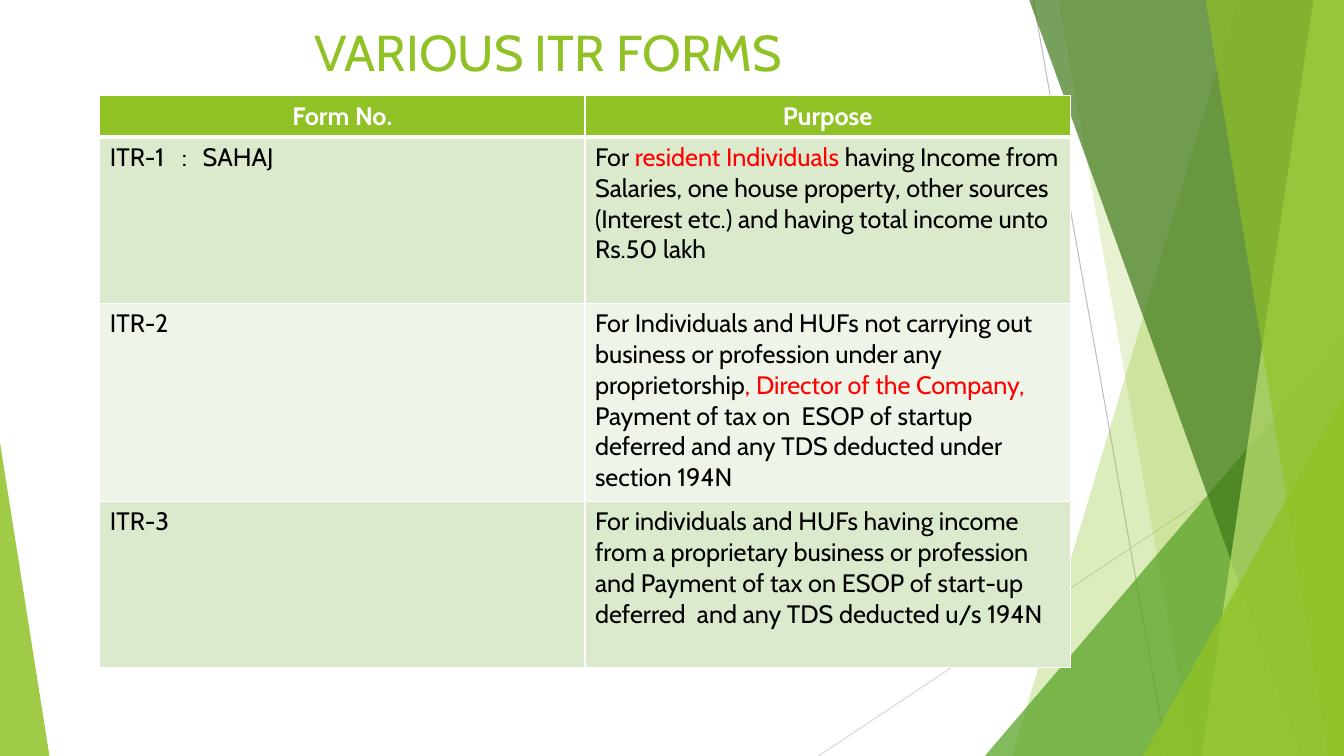
from dataclasses import dataclass

from lxml.etree import SubElement as Sub
from pptx import Presentation
from pptx.dml.color import RGBColor as RGB
from pptx.enum.shapes import MSO_CONNECTOR as Link, MSO_SHAPE as Kind
from pptx.enum.text import MSO_ANCHOR as Anchor, PP_ALIGN as Align
from pptx.oxml.ns import qn
from pptx.util import Inches, Pt

WIDE, HIGH = Inches(13.333), Inches(7.5)


@dataclass(frozen=True)
class Theme:
    font: str = "Cabin"
    title: int = 36
    body: int = 18
    lime: str = "90C226"
    leaf: str = "54A021"
    pine: str = "3F7819"
    pale: str = "C0E474"
    odd: str = "DBE9CD"
    even: str = "EEF4E8"
    white: str = "FFFFFF"
    black: str = "000000"
    red: str = "FF0000"
    dark: str = "BFBFBF"
    light: str = "D9D9D9"


T = Theme()

HEAD = ("Form No.", "Purpose")
# Each purpose is a list of (text, colour) runs
FORMS = [
    ("ITR-1\t:\tSAHAJ", [
        ("For ", T.black),
        ("resident Individuals ", T.red),
        ("having Income from Salaries, one house property, other sources "
         "(Interest etc.) and having total income unto Rs.50 lakh", T.black)]),
    ("ITR-2", [
        ("For Individuals and HUFs not carrying out business or profession "
         "under any proprietorship", T.black),
        (", Director of the Company,", T.red),
        (" Payment of tax on  ESOP of startup deferred and any TDS deducted "
         "under section 194N", T.black)]),
    ("ITR-3", [
        ("For individuals and HUFs having income from a proprietary business "
         "or profession and Payment of tax on ESOP of start-up deferred  and "
         "any TDS deducted u/s 194N", T.black)]),
]


# Lengths are percent of the slide's width and height
def across(part):
    return round(WIDE * part / 100)


def down(part):
    return round(HIGH * part / 100)


def paint(shape, tone, solid):
    shape.shadow.inherit = False
    shape.line.fill.background()
    shape.fill.solid()
    shape.fill.fore_color.rgb = RGB.from_string(tone)
    color = shape.fill._xPr.find(".//" + qn("a:srgbClr"))
    Sub(color, qn("a:alpha"), val=str(solid * 1000))


def panel(slide, top, base, tone, solid):
    """Slanted band that runs from its left edge to the slide's right side."""
    form = slide.shapes.build_freeform(across(top), 0, scale=1.0)
    form.add_line_segments([(WIDE, 0), (WIDE, HIGH), (across(base), HIGH)])
    paint(form.convert_to_shape(), tone, solid)


def wedge(slide, left, top, width, peak, tone, solid):
    """Triangle that stands on the slide's lower edge."""
    shape = slide.shapes.add_shape(
        Kind.ISOSCELES_TRIANGLE, across(left), down(top),
        across(width), down(100 - top))
    shape.adjustments[0] = peak
    paint(shape, tone, solid)


def rule(slide, x1, y1, x2, y2, tone):
    line = slide.shapes.add_connector(
        Link.STRAIGHT, across(x1), down(y1), across(x2), down(y2))
    line.line.color.rgb = RGB.from_string(tone)
    line.line.width = Pt(0.75)
    Sub(line._element.spPr, qn("a:effectLst"))


def write(frame, runs, size, align=Align.LEFT, bold=False):
    para = frame.paragraphs[0]
    para.alignment = align
    para.font.name, para.font.size, para.font.bold = T.font, Pt(size), bold
    for text, tone in runs:
        run = para.add_run()
        run.text = text
        run.font.color.rgb = RGB.from_string(tone)
    return para


def tabs(para, stops):
    """Put left tab stops ahead of the paragraph's font."""
    props = para._p.get_or_add_pPr()
    group = Sub(props, qn("a:tabLst"))
    props.insert(0, group)
    for stop in stops:
        Sub(group, qn("a:tab"), pos=str(across(stop)), algn="l")


def style(cell, tone, top, base):
    """White borders first, then the fill."""
    props = cell._tc.get_or_add_tcPr()
    for side, size in zip("LRTB", (1, 1, top, base)):
        edge = Sub(props, qn("a:ln" + side), w=str(Pt(size)))
        Sub(Sub(edge, qn("a:solidFill")), qn("a:srgbClr"), val=T.white)
    cell.fill.solid()
    cell.fill.fore_color.rgb = RGB.from_string(tone)


def backdrop(slide):
    rule(slide, 76.88, 0, 86.85, 100, T.dark)
    rule(slide, 100, 53.73, 60.9, 100, T.light)
    panel(slide, 92.1, 75.3, T.lime, 30)
    panel(slide, 78.75, 88.73, T.lime, 20)
    wedge(slide, 73.28, 44.4, 26.72, 1, T.leaf, 72)
    panel(slide, 76.58, 96.83, T.pine, 70)
    panel(slide, 97.73, 89.4, T.pale, 70)
    panel(slide, 89.7, 98.85, T.lime, 65)
    wedge(slide, 85.05, 52.4, 14.95, 1, T.lime, 80)
    wedge(slide, 0, 58.53, 3.68, 0, T.lime, 85)


def title(slide, text):
    box = slide.shapes.add_textbox(
        across(5.55), down(1.87), across(70.5), down(9.87))
    frame = box.text_frame
    frame.word_wrap = True
    frame.vertical_anchor = Anchor.MIDDLE
    write(frame, [(text, T.lime)], T.title, Align.CENTER)


def grid(slide):
    rows = (5.47, 22, 26.2, 22)
    table = slide.shapes.add_table(
        len(rows), len(HEAD), across(7.43), down(12.67),
        across(72.2), down(sum(rows))).table
    table.first_row = table.horz_banding = False
    for row, part in zip(table.rows, rows):
        row.height = down(part)

    # Header
    for cell, text in zip(table.rows[0].cells, HEAD):
        style(cell, T.lime, 1, 3)
        write(cell.text_frame, [(text, T.white)], T.body, Align.CENTER, True)

    # One row for each form
    for num, (name, runs) in enumerate(FORMS, 1):
        left, right = table.rows[num].cells
        for cell in (left, right):
            style(cell, T.odd if num % 2 else T.even, 3 if num == 1 else 1, 1)
        para = write(left.text_frame, [(name, T.black)], T.body)
        if "\t" in name:
            tabs(para, (5.35, 6.9))
        write(right.text_frame, runs, T.body)


def main():
    deck = Presentation()
    deck.slide_width, deck.slide_height = WIDE, HIGH
    slide = deck.slides.add_slide(deck.slide_layouts[6])
    backdrop(slide)
    title(slide, "VARIOUS ITR FORMS")
    grid(slide)
    deck.save("out.pptx")


if __name__ == "__main__":
    main()
